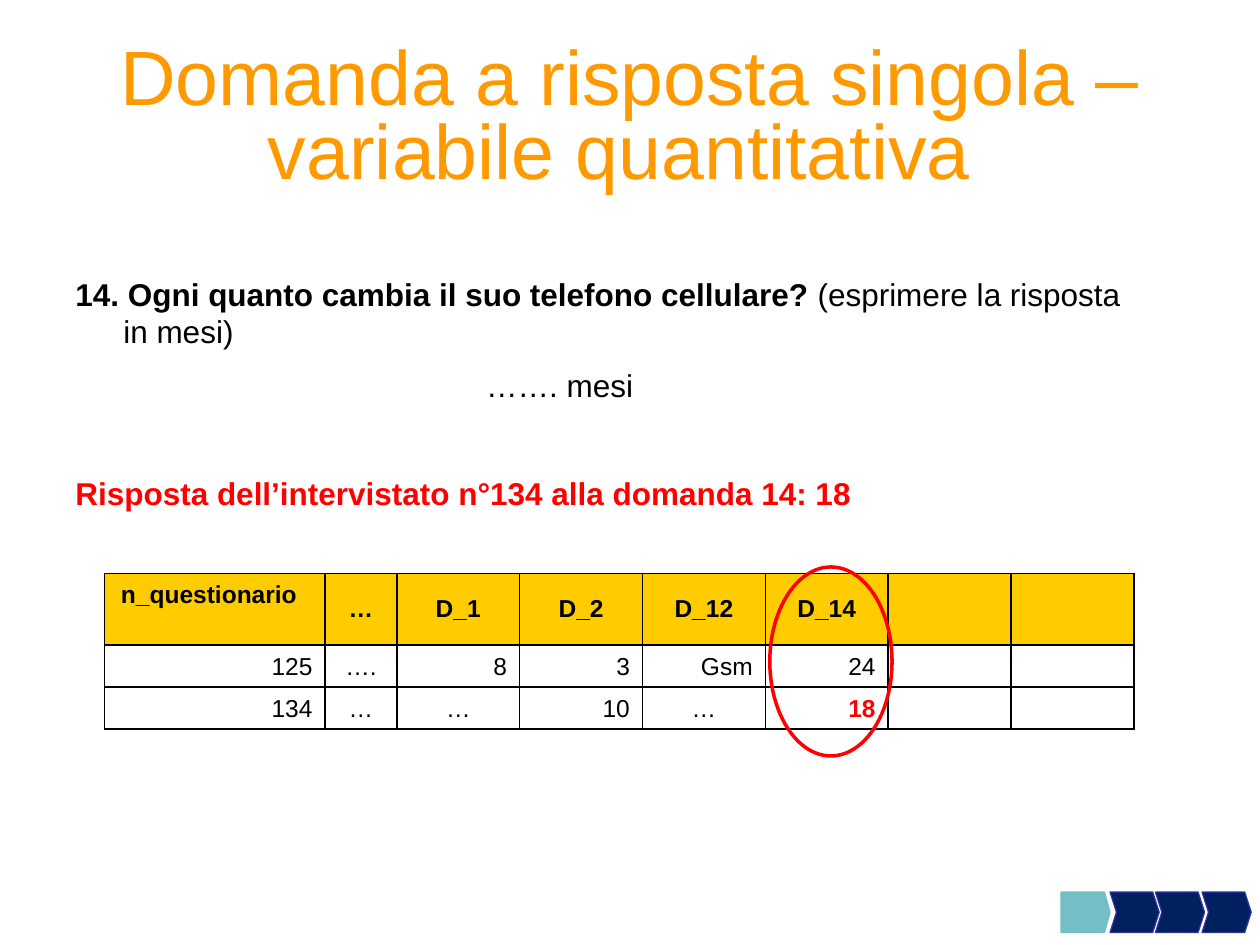
"""Builds a slide on coding a single-answer quantitative survey question."""
from lxml import etree
from pptx import Presentation
from pptx.dml.color import RGBColor
from pptx.enum.shapes import MSO_SHAPE
from pptx.enum.text import MSO_ANCHOR, PP_ALIGN
from pptx.oxml.ns import qn
from pptx.util import Inches, Pt

LEFT, CENTER, RIGHT = PP_ALIGN.LEFT, PP_ALIGN.CENTER, PP_ALIGN.RIGHT
TOP, MIDDLE, BOTTOM = MSO_ANCHOR.TOP, MSO_ANCHOR.MIDDLE, MSO_ANCHOR.BOTTOM
OVAL, CHEVRON, PENTAGON = MSO_SHAPE.OVAL, MSO_SHAPE.CHEVRON, MSO_SHAPE.PENTAGON
BLACK = RGBColor(0x00, 0x00, 0x00)
RED = RGBColor(0xFF, 0x00, 0x00)
ORANGE = RGBColor(0xFF, 0x99, 0x00)
YELLOW = RGBColor(0xFF, 0xCC, 0x00)
NAVY = RGBColor(0x00, 0x20, 0x60)
INDIGO = RGBColor(0x33, 0x33, 0x99)
TEAL = RGBColor(0x72, 0xBF, 0xC5)

TITLE = "Domanda a risposta singola – variabile quantitativa "
QUESTION = "14. Ogni quanto cambia il suo telefono cellulare? "
HINT = "(esprimere la risposta in mesi)"
BLANK = "……. mesi"
ANSWER = "Risposta dell’intervistato n°134 alla domanda 14: 18"
ROWS = [
    ["n_questionario", "…", "D_1", "D_2", "D_12", "D_14", "", ""],
    ["125", "….", "8", "3", "Gsm", "24", "", ""],
    ["134", "…", "…", "10", "…", "18", "", ""],
]
COL_WIDTHS = [1.75, 0.57] + [0.975] * 6
ROW_HEIGHTS = [0.57, 0.33, 0.33]
ARROWS = [
    (PENTAGON, 8.42, 0.14, TEAL, TEAL),
    (CHEVRON, 8.81, 0.16, NAVY, INDIGO),
    (CHEVRON, 9.17, 0.16, NAVY, INDIGO),
    (CHEVRON, 9.54, 0.16, NAVY, INDIGO),
]


def add_run(p, text, size=18, color=BLACK, bold=False):
    r = p.add_run()
    r.text = text
    r.font.name = "Arial"
    r.font.size = Pt(size)
    r.font.bold = bold
    r.font.color.rgb = color


def indent(p, left, first=0):
    pPr = p._p.get_or_add_pPr()
    pPr.set("marL", str(Inches(left)))
    pPr.set("indent", str(Inches(first)))


def add_borders(cell):
    tcPr = cell._tc.get_or_add_tcPr()
    for i, side in enumerate(("lnL", "lnR", "lnT", "lnB")):
        ln = etree.Element(qn(f"a:{side}"), w=str(Pt(1)))
        fill = etree.SubElement(ln, qn("a:solidFill"))
        etree.SubElement(fill, qn("a:srgbClr"), val=str(BLACK))
        tcPr.insert(i, ln)


def add_title(s):
    sp = s.shapes.title
    sp.left, sp.top, sp.width, sp.height = map(Inches, (0.5, 0.33, 9, 1.25))
    tf = sp.text_frame
    tf.vertical_anchor = MIDDLE
    p = tf.paragraphs[0]
    p.alignment = CENTER
    p.line_spacing = 0.8
    add_run(p, TITLE, size=44, color=ORANGE)


def add_question(s):
    sp = s.shapes.add_textbox(*map(Inches, (0.5, 2.13, 8.75, 3.43)))
    tf = sp.text_frame
    tf.word_wrap = True
    p = tf.paragraphs[0]
    indent(p, 0.38, -0.38)
    add_run(p, QUESTION, bold=True)
    add_run(p, HINT)
    p = tf.add_paragraph()
    indent(p, 3.26)
    p.space_before = Pt(9)
    add_run(p, BLANK)
    p = tf.add_paragraph()
    indent(p, 0.38, -0.38)
    p.space_before = Pt(40)
    add_run(p, ANSWER, color=RED, bold=True)


def add_answers(s):
    frame = s.shapes.add_table(
        len(ROWS), len(COL_WIDTHS), Inches(0.83), Inches(4.55),
        Inches(sum(COL_WIDTHS)), Inches(sum(ROW_HEIGHTS)))
    table = frame.table
    for col, width in zip(table.columns, COL_WIDTHS):
        col.width = Inches(width)
    for i, (texts, height) in enumerate(zip(ROWS, ROW_HEIGHTS)):
        table.rows[i].height = Inches(height)
        for j, text in enumerate(texts):
            cell = table.cell(i, j)
            header, answer = i == 0, text == "18"
            p = cell.text_frame.paragraphs[0]
            p.alignment = CENTER if header or "…" in text else RIGHT
            cell.vertical_anchor = MIDDLE if header else BOTTOM
            if header:
                cell.fill.solid()
                cell.fill.fore_color.rgb = YELLOW
            else:
                cell.fill.background()
            if text:
                add_run(p, text, size=14, color=RED if answer else BLACK,
                        bold=header or answer)
            else:
                cell.margin_top = cell.margin_bottom = 0
            add_borders(cell)
    first = table.cell(0, 0)
    first.vertical_anchor = TOP
    first.margin_left = Inches(0.13)
    first.margin_top = Inches(0.06)
    first.text_frame.paragraphs[0].alignment = LEFT


def add_outline(s, kind, box, line, width, fill=None):
    sp = s.shapes.add_shape(kind, *map(Inches, box))
    sp.shadow.inherit = False
    sp.line.color.rgb = line
    sp.line.width = Pt(width)
    if fill is None:
        sp.fill.background()
    else:
        sp.fill.solid()
        sp.fill.fore_color.rgb = fill
    return sp


def main():
    prs = Presentation()
    prs.slide_width, prs.slide_height = Inches(10), Inches(7.5)
    s = prs.slides.add_slide(prs.slide_layouts[5])
    add_title(s)
    add_question(s)
    add_answers(s)
    add_outline(s, OVAL, (6.11, 4.5, 0.97, 1.5), RED, 2)
    for kind, left, point, fill, line in ARROWS:
        sp = add_outline(s, kind, (left, 7.08, 0.39, 0.32), line, 0.75, fill)
        sp.adjustments[0] = point
    prs.save("out.pptx")


if __name__ == "__main__":
    main()
